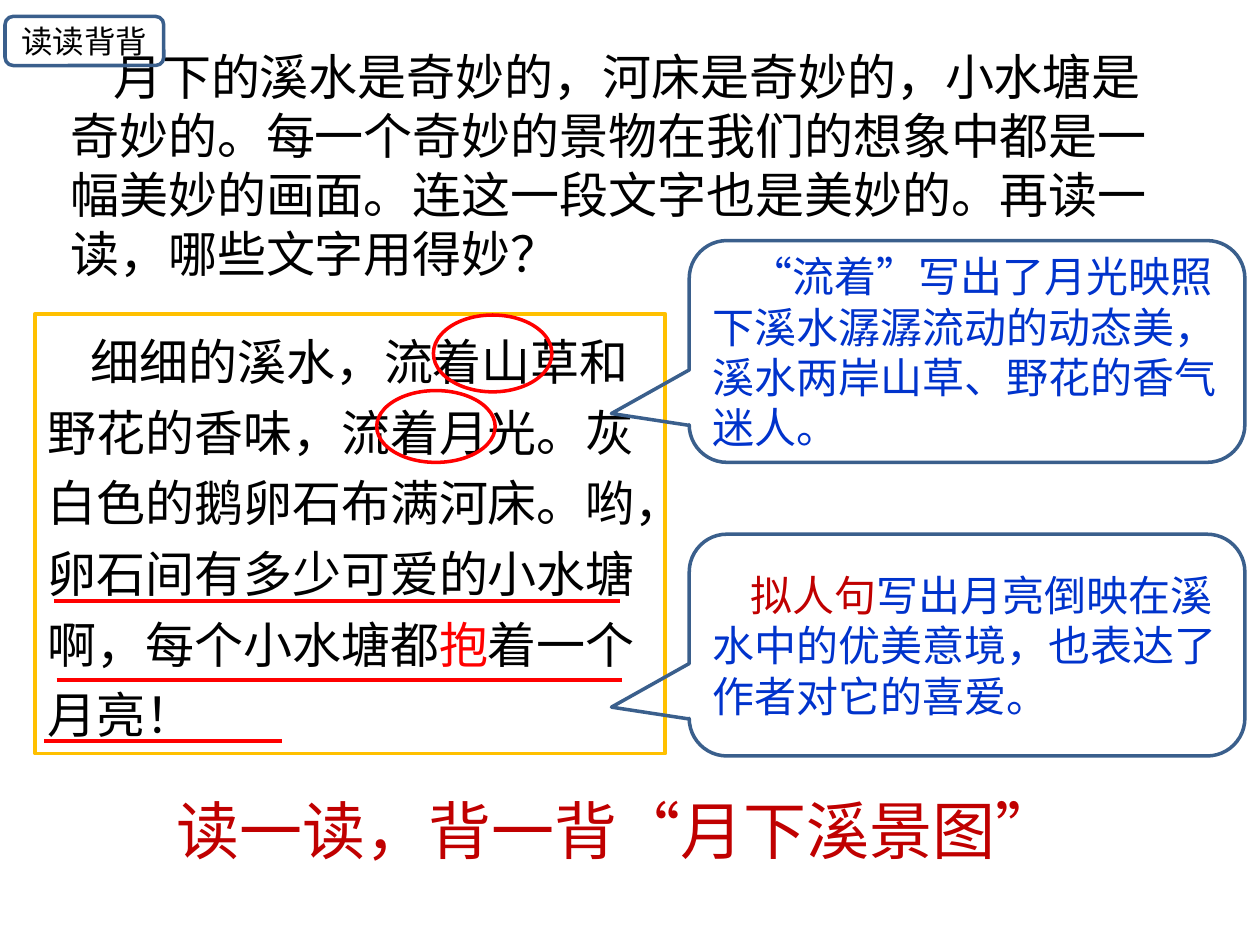
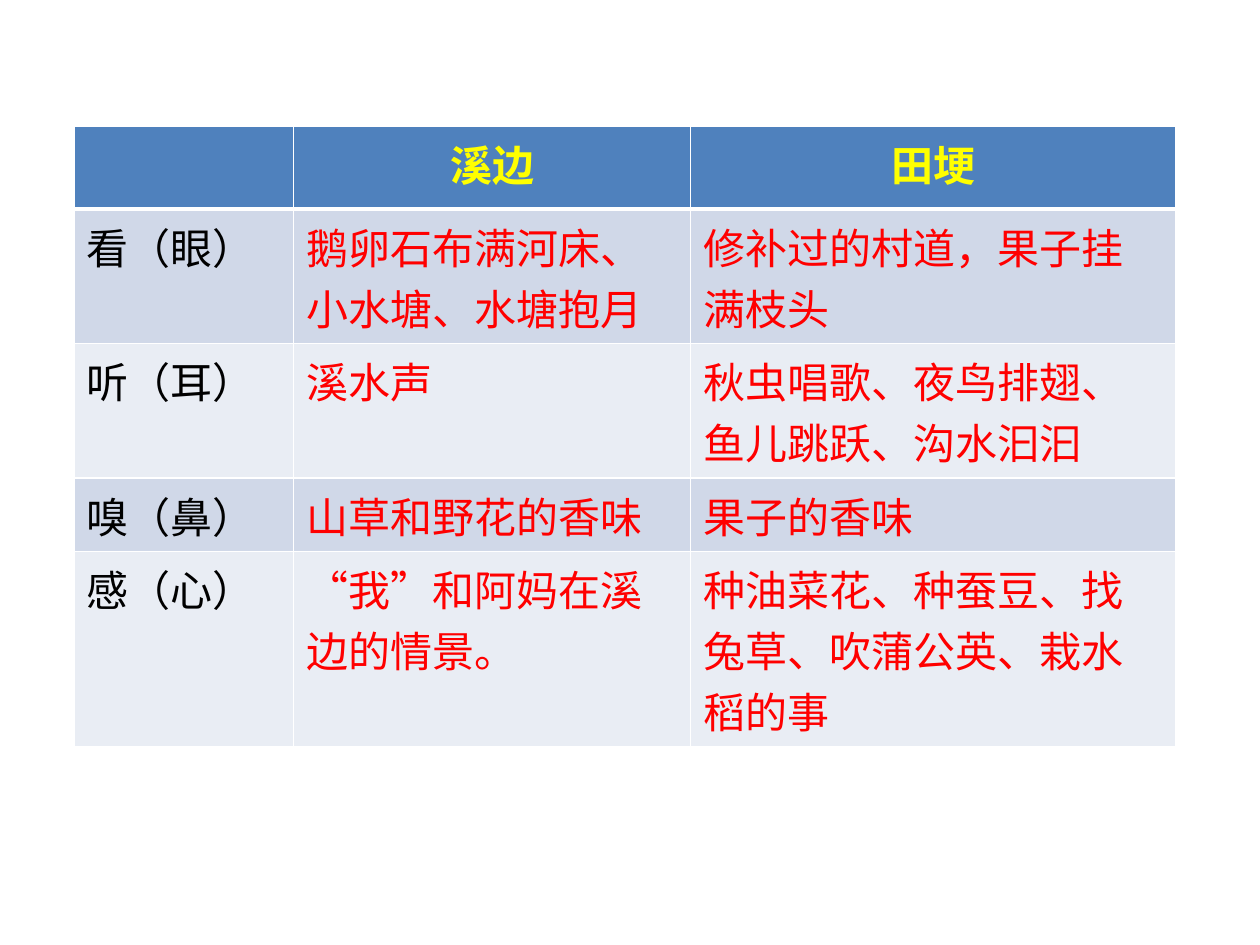
import pptx
import pptx.util
import pptx.dml.color
import pptx.enum.shapes
import pptx.enum.text
import pptx.oxml
import pptx.oxml.ns
from lxml import etree

In, Pt = pptx.util.Inches, pptx.util.Pt
SHAPE = pptx.enum.shapes.MSO_SHAPE
ANCHOR = pptx.enum.text.MSO_ANCHOR
CENTER = pptx.enum.text.PP_ALIGN.CENTER
FONT = "Noto Sans CJK SC"
COLORS = {
    "black": "000000", "red": "FF0000", "dark_red": "C00000", "blue": "0033CC",
    "frame": "3A5F8C", "gold": "FFC000", "yellow": "FFFF00", "white": "FFFFFF",
    "header": "4F81BD", "band_dark": "D0D8E8", "band_light": "E9EDF4",
}

# Content: text is a list of (words, colour)
QUESTION = [("月下的溪水是奇妙的，河床是奇妙的，小水塘是奇妙的。每一个奇妙的景物在我们的想象中"
             "都是一幅美妙的画面。连这一段文字也是美妙的。再读一读，哪些文字用得妙？", "black")]
PASSAGE = [("细细的溪水，流着山草和野花的香味，流着月光。灰白色的鹅卵石布满河床。哟，"
            "卵石间有多少可爱的小水塘啊，每个小水塘都", "black"),
           ("抱", "red"), ("着一个月亮！", "black")]
NOTES = [
    (1.91, [("“流着”写出了月光映照下溪水潺潺流动的动态美，溪水两岸山草、野花的香气迷人。", "blue")]),
    (4.24, [("拟人句", "dark_red"),
            ("写出月亮倒映在溪水中的优美意境，也表达了作者对它的喜爱。", "blue")]),
]
LABEL = [("读读背背", "black")]
TASK = [("读一读，背一背“月下溪景图”", "dark_red")]
CIRCLES = [(3.44, 2.5, 0.94, 0.61), (2.99, 3.1, 0.94, 0.57)]
UNDERLINES = [(0.43, 4.77, 4.49), (0.45, 5.4, 4.49), (0.35, 5.88, 1.89)]  # left, y, length

SENSES = [
    ("", "溪边", "田埂"),
    ("看（眼）", "鹅卵石布满河床、小水塘、水塘抱月", "修补过的村道，果子挂满枝头"),
    ("听（耳）", "溪水声", "秋虫唱歌、夜鸟排翅、鱼儿跳跃、沟水汩汩"),
    ("嗅（鼻）", "山草和野花的香味", "果子的香味"),
    ("感（心）", "“我”和阿妈在溪边的情景。", "种油菜花、种蚕豆、找兔草、吹蒲公英、栽水稻的事"),
]
COLUMNS = (1.74, 3.15, 3.85)
HEADER_HEIGHT, ROW_HEIGHT = 0.66, 0.58


def rgb(name):
    return pptx.dml.color.RGBColor.from_string(COLORS[name])


def write(tf, runs, size, indent=0, spacing=None, align=None, bold=False):
    p = tf.paragraphs[0]
    if indent:
        p._p.get_or_add_pPr().set("indent", str(In(indent)))
    p.line_spacing, p.alignment = spacing, align
    for words, color in runs:
        r = p.add_run()
        r.text = words
        r.font.name, r.font.size, r.font.bold = FONT, Pt(size), bold
        r.font.color.rgb = rgb(color)
        ea = etree.SubElement(r._r.get_or_add_rPr(), pptx.oxml.ns.qn("a:ea"))
        ea.set("typeface", FONT)


def text_box(slide, at, runs, size, **style):
    tf = slide.shapes.add_textbox(*map(In, at)).text_frame
    tf.word_wrap = True
    write(tf, runs, size, **style)


def outline(slide, kind, at, color, width=2, anchor=ANCHOR.MIDDLE):
    sp = slide.shapes.add_shape(kind, *map(In, at))
    sp.shadow.inherit = False
    sp.fill.background()
    sp.line.color.rgb, sp.line.width = rgb(color), Pt(width)
    sp.text_frame.word_wrap = True
    sp.text_frame.vertical_anchor = anchor
    return sp


def underline(slide, left, y, length):
    line = slide.shapes.add_connector(pptx.enum.shapes.MSO_CONNECTOR.STRAIGHT,
                                      In(left), In(y), In(left + length), In(y))
    line.line.color.rgb, line.line.width = rgb("red"), Pt(2.25)
    etree.SubElement(line._element.spPr, pptx.oxml.ns.qn("a:effectLst"))


def cell_borders(cell, bottom):
    tc_pr = cell._tc.get_or_add_tcPr()
    for i, (side, width) in enumerate((("L", 1), ("R", 1), ("T", 1), ("B", bottom))):
        tc_pr.insert(i, pptx.oxml.parse_xml(
            f'<a:ln{side} {pptx.oxml.ns.nsdecls("a")} w="{Pt(width)}"><a:solidFill>'
            f'<a:srgbClr val="{COLORS["white"]}"/></a:solidFill></a:ln{side}>'))


def reading_slide(slide):
    text_box(slide, (0.46, 0.32, 8.98, 1.99), QUESTION, 28, indent=0.34)

    # Framed passage with circled words
    sp = outline(slide, SHAPE.RECTANGLE, (0.28, 2.49, 5, 3.49), "gold", 2.25, ANCHOR.TOP)
    write(sp.text_frame, PASSAGE, 28, indent=0.34, spacing=1.2)
    for at in CIRCLES:
        outline(slide, SHAPE.OVAL, at, "red")

    # Callouts and underlines
    for top, runs in NOTES:
        sp = outline(slide, SHAPE.ROUNDED_RECTANGULAR_CALLOUT, (5.47, top, 4.41, 1.76), "frame")
        for i, value in enumerate((-0.64, 0.28, 0.17)):
            sp.adjustments[i] = value
        write(sp.text_frame, runs, 24, indent=0.3)
    for mark in UNDERLINES:
        underline(slide, *mark)

    # Label and closing task
    sp = outline(slide, SHAPE.ROUNDED_RECTANGLE, (0.04, 0.13, 1.26, 0.39), "frame")
    write(sp.text_frame, LABEL, 18, align=CENTER)
    text_box(slide, (1.3, 6.23, 7.25, 0.71), TASK, 36)


def senses_slide(slide):
    height = HEADER_HEIGHT + ROW_HEIGHT * (len(SENSES) - 1)
    table = slide.shapes.add_table(len(SENSES), len(COLUMNS), In(0.59), In(1),
                                   In(sum(COLUMNS)), In(height)).table
    for column, width in zip(table.columns, COLUMNS):
        column.width = In(width)
    for i, row in enumerate(SENSES):
        head = i == 0
        table.rows[i].height = In(HEADER_HEIGHT if head else ROW_HEIGHT)
        band = "header" if head else "band_dark" if i % 2 else "band_light"
        for j, words in enumerate(row):
            cell = table.cell(i, j)
            cell.fill.solid()
            cell.fill.fore_color.rgb = rgb(band)
            cell_borders(cell, 3 if head else 1)
            color = "yellow" if head else "red" if j else "black"
            if words:
                write(cell.text_frame, [(words, color)], 24,
                      align=CENTER if head else None, bold=head)


def main():
    prs = pptx.Presentation()
    prs.slide_width, prs.slide_height = In(10), In(7.5)
    for build in (reading_slide, senses_slide):
        build(prs.slides.add_slide(prs.slide_layouts[6]))
    prs.save("out.pptx")


if __name__ == "__main__":
    main()
